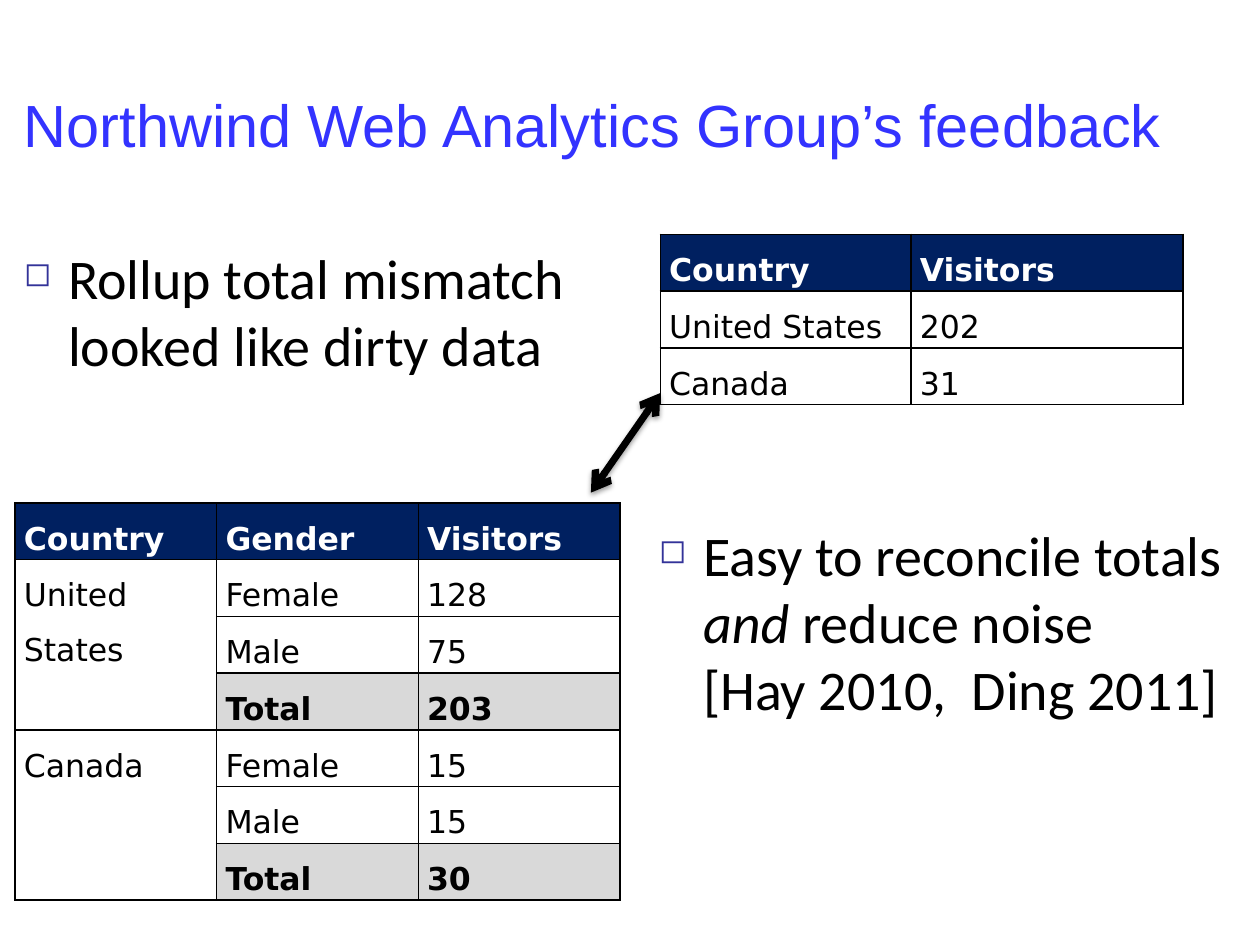
from lxml import etree
from pptx import Presentation
from pptx.dml.color import RGBColor
from pptx.enum.shapes import MSO_CONNECTOR
from pptx.enum.text import PP_ALIGN
from pptx.oxml.ns import qn
from pptx.util import Inches, Pt

STRAIGHT = MSO_CONNECTOR.STRAIGHT
LEFT = PP_ALIGN.LEFT

BLACK = RGBColor(0x00, 0x00, 0x00)
WHITE = RGBColor(0xFF, 0xFF, 0xFF)
TITLE_BLUE = RGBColor(0x33, 0x33, 0xFF)
BULLET_BLUE = RGBColor(0x33, 0x33, 0x99)
HEADER_NAVY = RGBColor(0x00, 0x20, 0x60)
TOTAL_GRAY = RGBColor(0xD9, 0xD9, 0xD9)

COUNTRY_ROWS = [
    ("Country", "Visitors"),
    ("United States", "202"),
    ("Canada", "31"),
]
GENDER_ROWS = [
    ("Country", "Gender", "Visitors"),
    ("United States", "Female", "128"),
    ("", "Male", "75"),
    ("", "Total", "203"),
    ("Canada", "Female", "15"),
    ("", "Male", "15"),
    ("", "Total", "30"),
]


def add_element(parent, tag, **attributes):
    """Append a DrawingML element with the given attributes."""
    element = etree.SubElement(parent, qn(tag))
    for name, value in attributes.items():
        element.set(name, str(value))
    return element


def add_text(paragraph, text, *, font, size, color=BLACK, bold=False, italic=False):
    """Add a formatted run to a paragraph."""
    run = paragraph.add_run()
    run.text = text
    run.font.name = font
    run.font.size = Pt(size)
    run.font.color.rgb = color
    run.font.bold = bold
    run.font.italic = italic


class SlideBuilder:
    """Hold the style and the current slide, and add each kind of element."""

    title_style = {"font": "Arial", "size": 34, "color": TITLE_BLUE}
    body_style = {"font": "Calibri", "size": 32}
    table_style = {"font": "DejaVu Sans", "size": 18}
    inset = Inches(0.07)
    row_height = Inches(0.43)

    def __init__(self, slide):
        self.slide = slide

    def text_box(self, left, top, width, height, top_inset):
        """Add an empty wrapping text box and return its first paragraph."""
        shape = self.slide.shapes.add_textbox(
            Inches(left), Inches(top), Inches(width), Inches(height)
        )
        frame = shape.text_frame
        frame.word_wrap = True
        frame.margin_left = frame.margin_right = self.inset
        frame.margin_top = Inches(top_inset)
        return frame.paragraphs[0]

    def title(self, text, left, top, width, height):
        """Add the slide title."""
        paragraph = self.text_box(left, top, width, height, 0.1)
        add_text(paragraph, text, **self.title_style)

    def bullet(self, lines, left, top, width, height):
        """Add a bullet whose lines hold (text, italic) pieces."""
        paragraph = self.text_box(left, top, width, height, 0.07)
        properties = paragraph._p.get_or_add_pPr()
        properties.set("marL", str(Inches(0.35)))
        properties.set("indent", str(Inches(-0.35)))
        color = add_element(properties, "a:buClr")
        add_element(color, "a:srgbClr", val=BULLET_BLUE)
        add_element(properties, "a:buSzPct", val=60000)
        add_element(properties, "a:buChar", char="◻")
        for index, pieces in enumerate(lines):
            if index:
                paragraph.add_line_break()
            for text, italic in pieces:
                add_text(paragraph, text, italic=italic, **self.body_style)

    def borders(self, cell):
        """Draw a thin black line on every side of a cell."""
        properties = cell._tc.get_or_add_tcPr()
        for tag in ("a:lnL", "a:lnR", "a:lnT", "a:lnB"):
            line = add_element(properties, tag, w=Pt(1))
            fill = add_element(line, "a:solidFill")
            add_element(fill, "a:srgbClr", val=BLACK)

    def cell(self, cell, text, fill, color, bold):
        """Format and fill one table cell."""
        cell.margin_left = cell.margin_right = self.inset
        cell.margin_top = cell.margin_bottom = 0
        self.borders(cell)
        if fill is None:
            cell.fill.background()
        else:
            cell.fill.solid()
            cell.fill.fore_color.rgb = fill
        if text:
            paragraph = cell.text_frame.paragraphs[0]
            paragraph.alignment = LEFT
            paragraph.line_spacing = 1.5
            add_text(paragraph, text, color=color, bold=bold, **self.table_style)

    def table(self, rows, left, top, widths, merged_starts=()):
        """Add a table, merging three rows of column one at each given start."""
        table = self.slide.shapes.add_table(
            len(rows), len(widths), Inches(left), Inches(top),
            Inches(sum(widths)), self.row_height * len(rows),
        ).table
        for column, width in zip(table.columns, widths):
            column.width = Inches(width)
        for row_index, values in enumerate(rows):
            for column_index, text in enumerate(values):
                is_header = row_index == 0
                is_total = "Total" in values and column_index > 0
                fill = HEADER_NAVY if is_header else TOTAL_GRAY if is_total else None
                self.cell(
                    table.cell(row_index, column_index), text, fill,
                    WHITE if is_header else BLACK, is_header or is_total,
                )
        for start in merged_starts:
            table.cell(start, 0).merge(table.cell(start + 2, 0))

    def double_arrow(self, start, end):
        """Add a thick shadowed line with an arrowhead at both ends."""
        connector = self.slide.shapes.add_connector(
            STRAIGHT, *(Inches(value) for value in (*start, *end))
        )
        connector.line.color.rgb = BLACK
        connector.line.width = Pt(4)
        line = connector.line._get_or_add_ln()
        for tag in ("a:headEnd", "a:tailEnd"):
            add_element(line, tag, type="arrow")
        effects = add_element(connector._element.spPr, "a:effectLst")
        shadow = add_element(
            effects, "a:outerShdw", blurRad=Pt(3.1), dist=Pt(1.6),
            dir=90 * 60000, rotWithShape=0,
        )
        color = add_element(shadow, "a:srgbClr", val=BLACK)
        add_element(color, "a:alpha", val=38000)


def main():
    """Build and save the feedback slide."""
    presentation = Presentation()
    presentation.slide_width = Inches(10)
    presentation.slide_height = Inches(7.5)
    builder = SlideBuilder(
        presentation.slides.add_slide(presentation.slide_layouts[6])
    )
    builder.title("Northwind Web Analytics Group’s feedback", 0.12, 0.6, 9.88, 1.04)
    builder.table(COUNTRY_ROWS, 5.24, 1.86, (1.99, 2.16))
    builder.table(GENDER_ROWS, 0.12, 3.99, (1.6, 1.6, 1.6), merged_starts=(1, 4))
    builder.bullet(
        [[("Rollup total mismatch looked like dirty data", False)]],
        0.12, 1.86, 5.04, 1.89,
    )
    builder.double_arrow((5.24, 3.12), (4.69, 3.91))
    builder.bullet(
        [
            [("Easy to reconcile totals ", False), ("and", True), (" reduce noise", False)],
            [("[Hay 2010,  Ding 2011]", False)],
        ],
        5.16, 4.06, 5.04, 2.68,
    )
    presentation.save("out.pptx")


if __name__ == "__main__":
    main()
